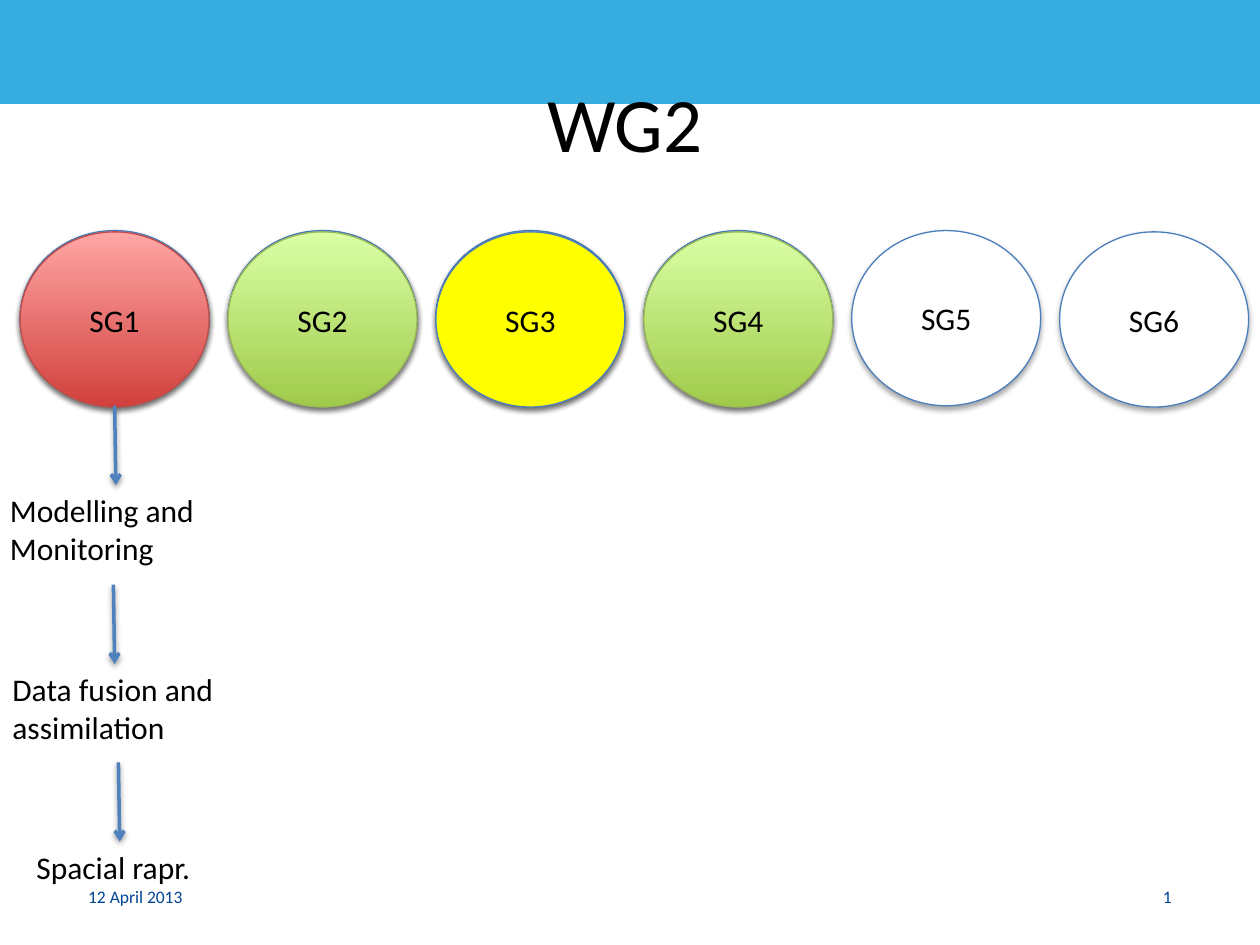
import lxml.etree
import pptx
import pptx.dml.color
import pptx.enum.shapes
import pptx.enum.text
import pptx.oxml
import pptx.oxml.ns
import pptx.util

RGB = pptx.dml.color.RGBColor
ALIGN = pptx.enum.text.PP_ALIGN
ANCHOR = pptx.enum.text.MSO_ANCHOR
FIT = pptx.enum.text.MSO_AUTO_SIZE
SHAPE = pptx.enum.shapes.MSO_SHAPE
Pt = pptx.util.Pt

PX = 9144  # EMU per px, 100 px to the inch

BLACK = RGB(0, 0, 0)
WHITE = RGB(255, 255, 255)
NAVY = RGB(0x00, 0x44, 0x94)
SKY = RGB(0x37, 0xAC, 0xDE)
YELLOW = RGB(255, 255, 0)
RIM = RGB(0x4B, 0x7E, 0xBC)
ARROW = RGB(0x4F, 0x81, 0xBD)
RED_RIM = RGB(0xBF, 0x4C, 0x48)
GREEN_RIM = RGB(0x98, 0xB9, 0x55)
BLUES = [RGB(0x3F, 0x80, 0xCE), RGB(0xA4, 0xC4, 0xFF)]
REDS = [RGB(0xD1, 0x40, 0x3C), RGB(0xFF, 0xA6, 0xA5)]
GREENS = [RGB(0xA0, 0xCA, 0x4A), RGB(0xDA, 0xFF, 0xA5)]

NO_INSET = dict(margin_left=0, margin_top=0, margin_right=0, margin_bottom=0)

# label, fill (one colour or a list from bottom to top), rim, drop, has a backing disc
GROUPS = [
    ("SG1", REDS, RED_RIM, 1, True),
    ("SG2", GREENS, GREEN_RIM, 1, True),
    ("SG3", YELLOW, RIM, 1, True),
    ("SG4", GREENS, GREEN_RIM, 1, True),
    ("SG5", WHITE, RIM, 0, False),
    ("SG6", WHITE, RIM, 1, False),
]
# label, its left, top and height, then left and top of the arrow above it
STEPS = [
    ("Modelling and Monitoring", -2, 385, 71, 91, 322),
    ("Data fusion and assimilation", 0, 527, 71, 90, 464),
    ("Spacial rapr.", 19, 668, 40, 94, 605),
]


def scale(*sizes):
    return [size * PX for size in sizes]


def put(thing, values):
    """Set each named attribute of the thing."""
    for name, value in values.items():
        setattr(thing, name, value)


def write(shape, text, size, color=BLACK, align=ALIGN.LEFT, **frame):
    put(shape.text_frame, dict(word_wrap=True, **frame))
    line = shape.text_frame.paragraphs[0]
    line.alignment = align
    run = line.add_run()
    run.text = text
    put(run.font, dict(name="Calibri", size=Pt(size)))
    run.font.color.rgb = color


def label(slide, box, text, size, **style):
    shape = slide.shapes.add_textbox(*scale(*box))
    write(shape, text, size, auto_size=FIT.SHAPE_TO_FIT_TEXT, **style)


def shade(shape, dist, alpha):
    """Add a soft shadow that falls straight down."""
    shape.element.spPr.append(pptx.oxml.parse_xml(
        f'<a:effectLst {pptx.oxml.ns.nsdecls("a")}>'
        f'<a:outerShdw blurRad="40000" dist="{dist}" dir="5400000" rotWithShape="0">'
        f'<a:srgbClr val="000000"><a:alpha val="{alpha}"/></a:srgbClr>'
        '</a:outerShdw></a:effectLst>'))


def paint(shape, fill, rim):
    if isinstance(fill, list):
        shape.fill.gradient()
        shape.fill.gradient_angle = 90
        for stop, color in zip(shape.fill.gradient_stops, fill):
            stop.color.rgb = color
    else:
        shape.fill.solid()
        shape.fill.fore_color.rgb = fill
    shape.line.color.rgb = rim
    shape.line.width = Pt(0.75)


def frame(slide):
    """Draw the top band, the date and the page number."""
    label(slide, (697, 703, 233, 17), "1", 10, color=NAVY,
          align=ALIGN.RIGHT, **NO_INSET)
    band = slide.shapes.add_shape(SHAPE.RECTANGLE, *scale(0, -1, 1000, 83))
    band.shadow.inherit = False
    paint(band, SKY, SKY)
    label(slide, (70, 703, 233, 17), "12 April 2013", 10, color=NAVY, **NO_INSET)


def head(slide, box):
    """Place the title in front of the band."""
    title = slide.shapes.title
    put(title, dict(zip(("left", "top", "width", "height"), scale(*box))))
    write(title, "WG2", 44, align=ALIGN.CENTER, vertical_anchor=ANCHOR.TOP)
    title.element.getparent().append(title.element)


def disc(slide, box, fill, rim):
    shape = slide.shapes.add_shape(SHAPE.OVAL, *scale(*box))
    paint(shape, fill, rim)
    shade(shape, 23000, 35000)
    return shape


def circles(slide, left, top, step):
    for i, (text, fill, rim, drop, backed) in enumerate(GROUPS):
        x = left + i * step
        if backed:
            disc(slide, (x, top, 150, 139), BLUES, RIM)
        shape = disc(slide, (x, top + drop, 150, 139), fill, rim)
        write(shape, text, 18, align=ALIGN.CENTER, vertical_anchor=ANCHOR.MIDDLE)


def arrow(slide, x, y):
    link = slide.shapes.add_connector(
        pptx.enum.shapes.MSO_CONNECTOR.STRAIGHT, *scale(x, y, x + 1, y + 63))
    link.line.color.rgb = ARROW
    link.line.width = Pt(2)
    qn = pptx.oxml.ns.qn
    lxml.etree.SubElement(link.element.spPr.find(qn("a:ln")),
                          qn("a:tailEnd"), type="arrow")
    shade(link, 20000, 38000)


def chain(slide):
    """Draw the steps below SG1, each with the arrow that leads to it."""
    for text, left, top, height, x, y in STEPS:
        label(slide, (left, top, 188, height), text, 18)
        arrow(slide, x, y)


def main():
    deck = pptx.Presentation()
    put(deck, dict(zip(("slide_width", "slide_height"), scale(1000, 750))))
    slide = deck.slides.add_slide(deck.slide_layouts[5])
    frame(slide)
    head(slide, (71, 55, 850, 161))
    circles(slide, 16, 183, 165)
    chain(slide)
    deck.save("out.pptx")


if __name__ == "__main__":
    main()
